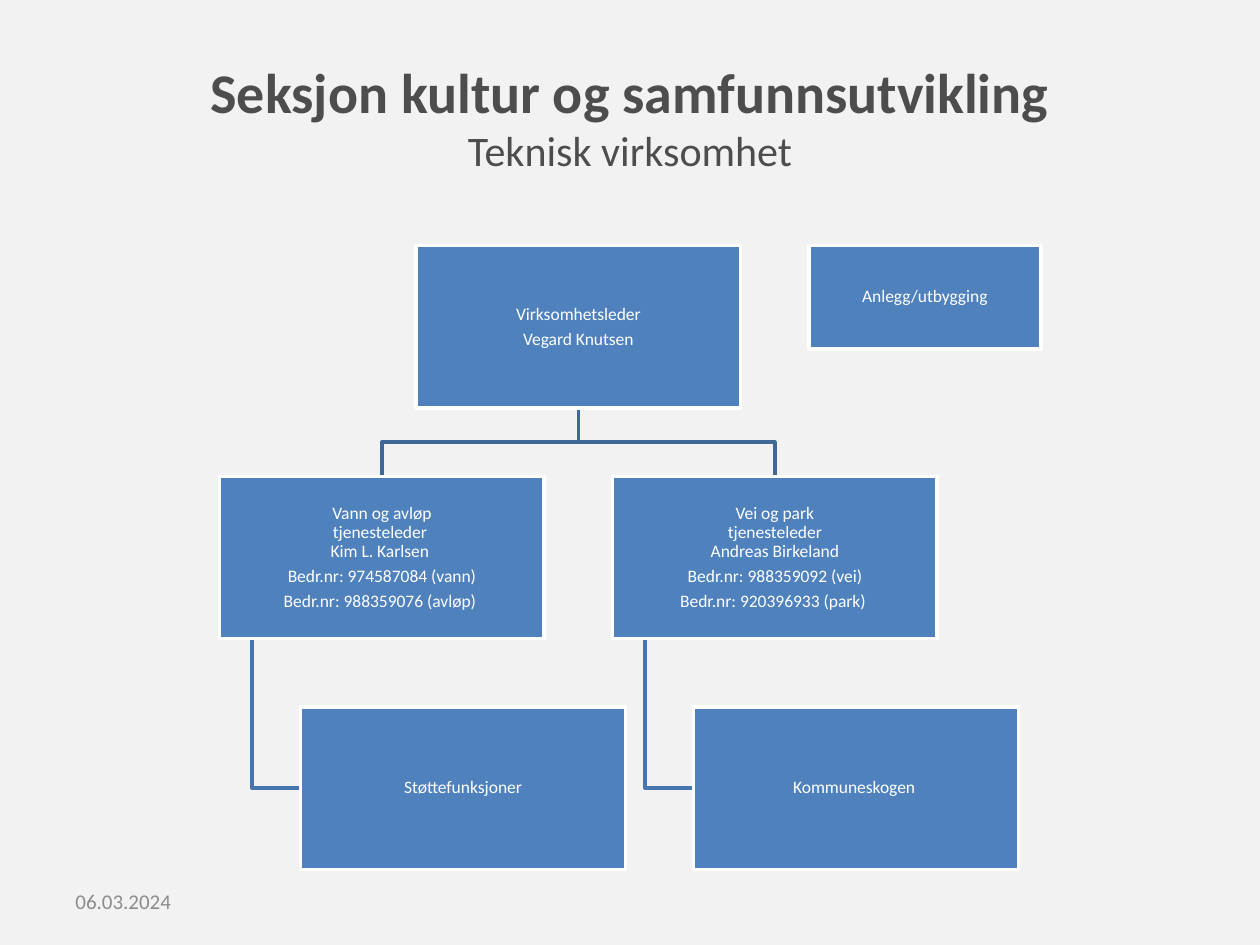
from pptx import Presentation
from pptx.dml.color import RGBColor
from pptx.enum.shapes import MSO_SHAPE
from pptx.enum.text import MSO_ANCHOR, MSO_AUTO_SIZE, PP_ALIGN
from pptx.oxml.ns import qn
from pptx.util import Pt

RECTANGLE = MSO_SHAPE.RECTANGLE
MIDDLE = MSO_ANCHOR.MIDDLE
CENTER, LEFT = PP_ALIGN.CENTER, PP_ALIGN.LEFT
NO_AUTOSIZE = MSO_AUTO_SIZE.NONE

BACKGROUND = RGBColor(0xF2, 0xF2, 0xF2)
TITLE_GREY = RGBColor(0x4D, 0x4D, 0x4D)
DATE_GREY = RGBColor(0x8C, 0x8C, 0x8C)
BOX_BLUE = RGBColor(0x4F, 0x81, 0xBD)
BRANCH_BLUE = RGBColor(0x3F, 0x67, 0x97)
TWIG_BLUE = RGBColor(0x48, 0x75, 0xAC)
WHITE = RGBColor(0xFF, 0xFF, 0xFF)
FONT = "Calibri"

# Content: each box is a list of paragraphs, each paragraph a list of lines
TITLE = "Seksjon kultur og samfunnsutvikling"
SUBTITLE = "Teknisk virksomhet"
DATE = "06.03.2024"
LEADER = [["Virksomhetsleder"], ["Vegard Knutsen"]]
CONSTRUCTION = [["Anlegg/utbygging"]]
SERVICES = [
    ([["Vann og avløp", "tjenesteleder ", "Kim L. Karlsen "],
      ["Bedr.nr: 974587084 (vann)"],
      ["Bedr.nr: 988359076 (avløp) "]],
     [["Støttefunksjoner"]]),
    ([["Vei og park", "tjenesteleder", "Andreas Birkeland"],
      ["Bedr.nr: 988359092 (vei)"],
      ["Bedr.nr: 920396933 (park) "]],
     [["Kommuneskogen "]]),
]

# Chart geometry in points
BOX_W, BOX_H = 185.6, 92.8
ROW_PITCH = 131.8
COLUMN_PITCH = 224.6
CHART_TOP = 140.4
LEADER_X = 237.7
CHILD_INDENT = BOX_W / 4
TWIG_INDENT = BOX_W / 10
LEADER_ROW, SERVICE_ROW, UNIT_ROW = (CHART_TOP + ROW_PITCH * i for i in range(3))


def add_lines(paragraph, lines, color):
    """Add (text, size, bold) lines to one paragraph, with breaks between."""
    for number, (text, size, bold) in enumerate(lines):
        if number:
            paragraph.add_line_break()
            line_break = paragraph._p.findall(qn("a:br"))[-1]
            properties = line_break.makeelement(qn("a:rPr"), {"sz": str(lines[number - 1][1] * 100)})
            line_break.append(properties)
        run = paragraph.add_run()
        run.text = text
        run.font.name = FONT
        run.font.size = Pt(size)
        run.font.bold = bold
        run.font.color.rgb = color


def add_box(slide, paragraphs, x, y, width=BOX_W, height=BOX_H):
    box = slide.shapes.add_shape(RECTANGLE, Pt(x), Pt(y), Pt(width), Pt(height))
    box.shadow.inherit = False
    box.fill.solid()
    box.fill.fore_color.rgb = BOX_BLUE
    box.line.color.rgb = WHITE
    box.line.width = Pt(2)
    frame = box.text_frame
    frame.word_wrap = True
    frame.vertical_anchor = MIDDLE
    frame.margin_left = frame.margin_right = Pt(0.5)
    frame.margin_top = frame.margin_bottom = Pt(0.5)
    for number, lines in enumerate(paragraphs):
        paragraph = frame.add_paragraph() if number else frame.paragraphs[0]
        paragraph.alignment = CENTER
        paragraph.line_spacing = 0.9
        paragraph.space_after = Pt(3.5)
        add_lines(paragraph, [(line, 10, False) for line in lines], WHITE)


def add_path(slide, points, color):
    (start, *rest) = [(Pt(x), Pt(y)) for x, y in points]
    builder = slide.shapes.build_freeform(*start)
    builder.add_line_segments(rest, close=False)
    path = builder.convert_to_shape()
    path.shadow.inherit = False
    path.fill.background()
    path.line.color.rgb = color
    path.line.width = Pt(2)


def main():
    prs = Presentation()
    prs.slide_width, prs.slide_height = Pt(720), Pt(540)
    slide = prs.slides.add_slide(prs.slide_layouts[5])
    slide.background.fill.solid()
    slide.background.fill.fore_color.rgb = BACKGROUND

    # Title
    title = slide.shapes.title
    title.left, title.top, title.width, title.height = Pt(36.5), Pt(21.6), Pt(647), Pt(90)
    title.text_frame.auto_size = NO_AUTOSIZE
    title.text_frame.vertical_anchor = MIDDLE
    heading = title.text_frame.paragraphs[0]
    heading.alignment = CENTER
    add_lines(heading, [(TITLE, 32, True), (SUBTITLE, 24, False)], TITLE_GREY)

    # Connecting lines, behind the boxes
    leader_mid = LEADER_X + BOX_W / 2
    leader_bottom = LEADER_ROW + BOX_H
    branch_y = (leader_bottom + SERVICE_ROW) / 2
    service_xs = [LEADER_X + COLUMN_PITCH * (i - 0.5) for i in range(len(SERVICES))]
    for x in service_xs:
        service_mid = x + BOX_W / 2
        add_path(slide, [(leader_mid, leader_bottom), (leader_mid, branch_y),
                         (service_mid, branch_y), (service_mid, SERVICE_ROW)], BRANCH_BLUE)
        twig_x, unit_mid = x + TWIG_INDENT, UNIT_ROW + BOX_H / 2
        add_path(slide, [(twig_x, SERVICE_ROW + BOX_H), (twig_x, unit_mid),
                         (x + CHILD_INDENT, unit_mid)], TWIG_BLUE)

    # Boxes
    add_box(slide, LEADER, LEADER_X, LEADER_ROW)
    for x, (service, unit) in zip(service_xs, SERVICES):
        add_box(slide, service, x, SERVICE_ROW)
        add_box(slide, unit, x + CHILD_INDENT, UNIT_ROW)
    add_box(slide, CONSTRUCTION, 462.2, LEADER_ROW, 132.6, 59)

    # Date
    date = slide.shapes.add_textbox(Pt(36), Pt(500.5), Pt(168), Pt(28.75)).text_frame
    date.word_wrap = True
    date.vertical_anchor = MIDDLE
    date.paragraphs[0].alignment = LEFT
    add_lines(date.paragraphs[0], [(DATE, 12, False)], DATE_GREY)

    prs.save("out.pptx")


if __name__ == "__main__":
    main()
